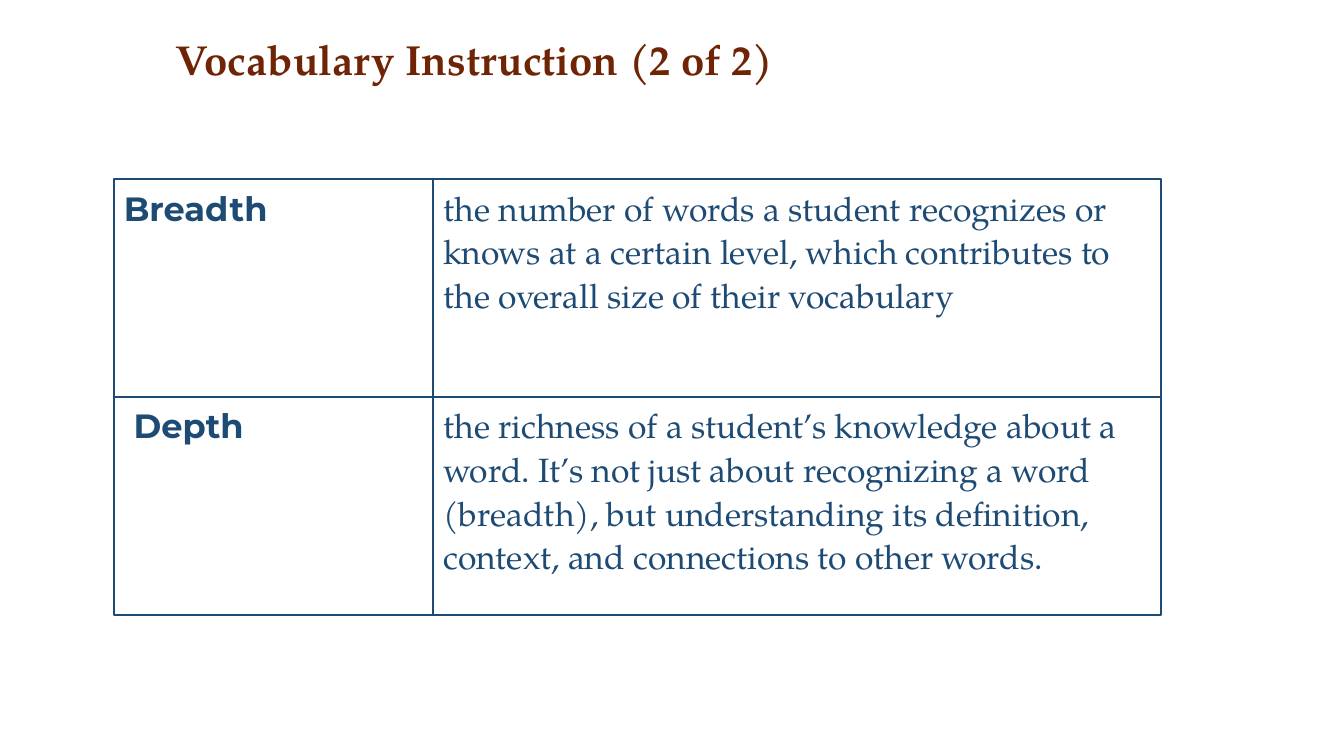
"""Build the vocabulary instruction slide with its grid of terms and definitions."""
from dataclasses import dataclass

from pptx import Presentation
from pptx import util as u
from pptx.dml.color import RGBColor
from pptx.enum import shapes, text
from pptx.slide import Slide
from pptx.text.text import TextFrame

COLOURS = {"heading": "6E2405", "ink": "1E4B74"}
SERIF, SANS = "TeX Gyre Pagella", "Montserrat"
GRID_LEFT, GRID_TOP, ROW_HEIGHT = 2.87, 4.52, 5.49
TERM_WIDTH, MEANING_WIDTH = 8.05, 18.34
INSET = 0.25


@dataclass
class Entry:
    """A vocabulary term, its meaning and the indent of the term in cm."""
    term: str
    meaning: str
    indent: float = 0


@dataclass
class Style:
    """The look of a piece of text."""
    font: str
    size: float
    colour: str
    bold: bool
    spacing: float


HEADING = Style(SERIF, 30, "heading", True, 0.9)
TERM = Style(SANS, 24, "ink", True, 1.08)
MEANING = Style(SERIF, 24, "ink", False, 1.08)

ENTRIES = [
    Entry("Breadth", "the number of words a student recognizes or knows at a certain "
          "level, which contributes to the overall size of their vocabulary"),
    Entry("Depth", "the richness of a student’s knowledge about a word. It’s not just "
          "about recognizing a word (breadth), but understanding its definition, "
          "context, and connections to other words.", indent=0.25),
]


def write(frame: TextFrame, words: str, style: Style, anchor: text.MSO_ANCHOR) -> None:
    """Fill a text frame with one styled, left-aligned paragraph."""
    frame.text = words
    frame.word_wrap = True
    frame.auto_size = text.MSO_AUTO_SIZE.NONE
    frame.vertical_anchor = anchor
    paragraph = frame.paragraphs[0]
    paragraph.alignment = text.PP_ALIGN.LEFT
    paragraph.line_spacing = style.spacing
    font = paragraph.runs[0].font
    font.name, font.size, font.bold = style.font, u.Pt(style.size), style.bold
    font.color.rgb = RGBColor.from_string(COLOURS[style.colour])


def add_cell(slide: Slide, left: float, top: float, width: float,
             words: str, style: Style, indent: float = 0) -> None:
    """Draw one outlined cell of the grid."""
    cell = slide.shapes.add_shape(shapes.MSO_SHAPE.RECTANGLE, u.Cm(left), u.Cm(top),
                                  u.Cm(width), u.Cm(ROW_HEIGHT))
    cell.shadow.inherit = False
    cell.fill.background()
    cell.line.color.rgb = RGBColor.from_string(COLOURS["ink"])
    cell.line.width = u.Pt(1.5)
    cell.text_frame.margin_left = u.Cm(INSET + indent)
    write(cell.text_frame, words, style, text.MSO_ANCHOR.TOP)


def main() -> None:
    """Create the presentation and save it."""
    deck = Presentation()
    deck.slide_width, deck.slide_height = u.Cm(33.87), u.Cm(19.05)
    slide = deck.slides.add_slide(deck.slide_layouts[5])

    heading = slide.shapes.title
    heading.left, heading.top = u.Cm(4.17), u.Cm(0.51)
    heading.width, heading.height = u.Cm(27.38), u.Cm(2.08)
    write(heading.text_frame, "Vocabulary Instruction (2 of 2)", HEADING,
          text.MSO_ANCHOR.MIDDLE)

    for row, entry in enumerate(ENTRIES):
        top = GRID_TOP + row * ROW_HEIGHT
        add_cell(slide, GRID_LEFT, top, TERM_WIDTH, entry.term, TERM, entry.indent)
        add_cell(slide, GRID_LEFT + TERM_WIDTH, top, MEANING_WIDTH, entry.meaning, MEANING)

    deck.save("out.pptx")


if __name__ == "__main__":
    main()
